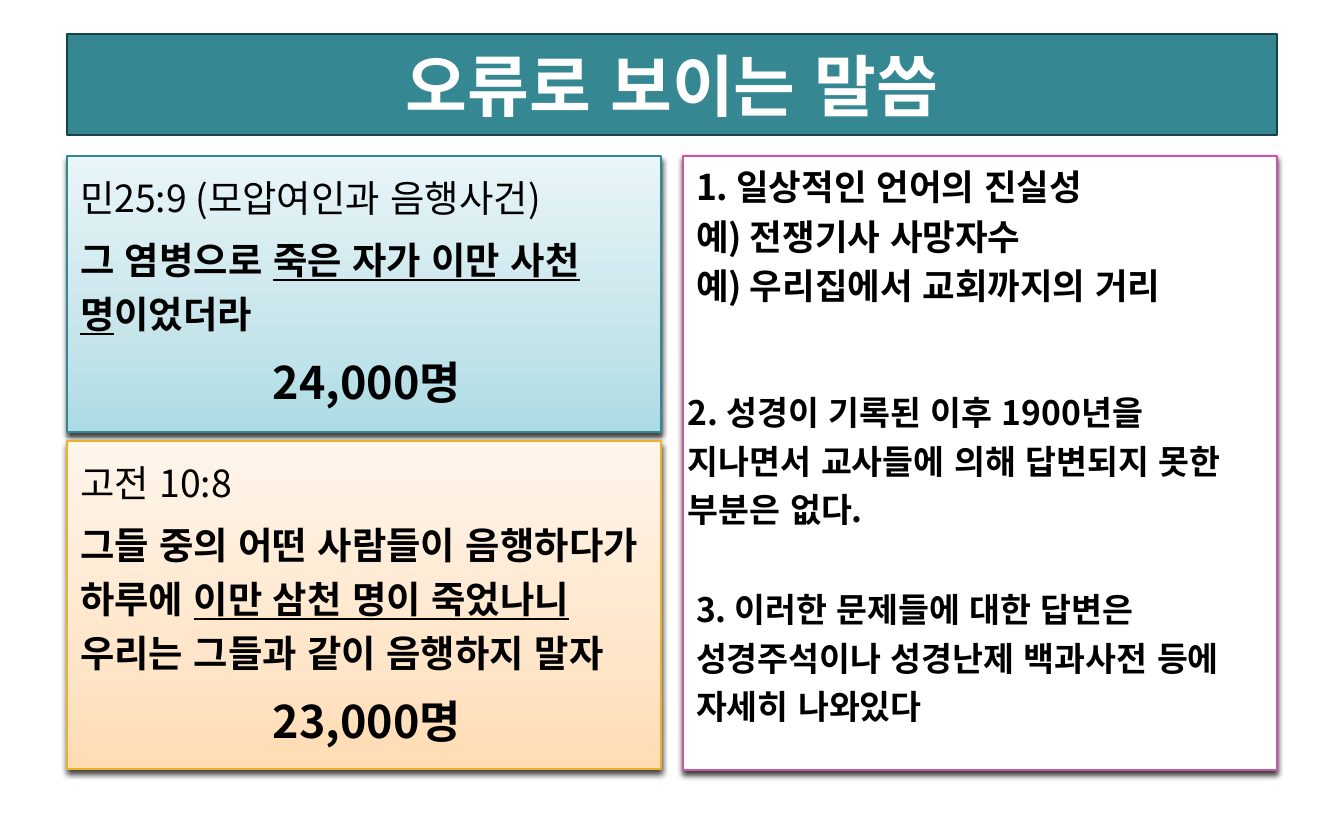
"""Build a one-slide comparison of two passages beside three explanations."""
from dataclasses import dataclass

from lxml import etree
from pptx import Presentation
from pptx.dml.color import RGBColor
from pptx.enum.lang import MSO_LANGUAGE_ID
from pptx.enum.text import MSO_ANCHOR, MSO_AUTO_SIZE, PP_ALIGN
from pptx.oxml.ns import qn
from pptx.util import Emu, Pt

KOREAN = MSO_LANGUAGE_ID.KOREAN
TOP, MIDDLE = MSO_ANCHOR.TOP, MSO_ANCHOR.MIDDLE
LEFT, CENTER = PP_ALIGN.LEFT, PP_ALIGN.CENTER
NO_FIT = MSO_AUTO_SIZE.NONE
PAGE_WIDTH, PAGE_HEIGHT = 1344, 840
SCALE = 9144000 / PAGE_WIDTH
COMPARISON_LAYOUT = 4


@dataclass(frozen=True)
class Theme:
    font: str = "Noto Sans CJK KR"
    ink: str = "000000"
    white: str = "FFFFFF"
    teal: str = "358791"
    dark_teal: str = "1A4348"
    aqua_line: str = "338993"
    amber_line: str = "EEB026"
    pink_line: str = "CA56A7"
    aqua: tuple[str, ...] = ("ACDBE4", "C6E5EB", "E9F5F8")
    amber: tuple[str, ...] = ("FFDCB3", "FFE6CA", "FFF5EB")
    title: int = 36
    figure: int = 24
    verse: int = 20
    point: int = 19
    note: int = 18


THEME = Theme()


@dataclass(frozen=True)
class Area:
    left: int
    top: int
    width: int
    height: int


@dataclass(frozen=True)
class Span:
    text: str
    bold: bool = True
    underline: bool = False


@dataclass(frozen=True)
class Line:
    spans: tuple[Span, ...]
    size: int
    spacing: float | None
    before: int = 0
    indent: int = 0
    align: PP_ALIGN = LEFT
    color: str = THEME.ink


@dataclass(frozen=True)
class Panel:
    placeholder: int
    area: Area
    fill: tuple[str, ...]
    border: str
    weight: float
    lines: tuple[Line, ...]
    anchor: MSO_ANCHOR = TOP
    shadow: bool = True


@dataclass(frozen=True)
class Note:
    area: Area
    text: str


def px(length: int) -> Emu:
    """Turn pixels into EMU."""
    return Emu(round(length * SCALE))


def passage(reference: str, verse: tuple[Span, ...], figure: str) -> tuple[Line, ...]:
    """Describe a Bible reference, its verse and the number it gives."""
    return (
        Line((Span(reference, bold=False),), THEME.verse, 29),
        Line(verse, THEME.verse, 29, before=4),
        Line((Span(figure),), THEME.figure, 35, before=4, indent=193),
    )


PANELS = (
    Panel(0, Area(67, 34, 1210, 101), (THEME.teal,), THEME.dark_teal, 1.5,
          (Line((Span("오류로 보이는 말씀"),), THEME.title, None, align=CENTER,
                color=THEME.white),), MIDDLE, shadow=False),
    Panel(1, Area(67, 156, 594, 276), THEME.aqua, THEME.aqua_line, 1,
          passage("민 25:9 (모압여인과 음행사건)".replace("민 ", "민"),
                  (Span("그 염병으로 "), Span("죽은 자가 이만 사천 명", underline=True),
                   Span("이었더라")), "24,000명")),
    Panel(3, Area(67, 441, 594, 328), THEME.amber, THEME.amber_line, 1,
          passage("고전 10:8",
                  (Span("그들 중의 어떤 사람들이 음행하다가 하루에 "),
                   Span("이만 삼천 명이 죽었나니", underline=True),
                   Span(" 우리는 그들과 같이 음행하지 말자")), "23,000명")),
    Panel(2, Area(683, 156, 594, 614), (THEME.white,), THEME.pink_line, 1.5,
          tuple(Line((Span(text),), THEME.point, 22.5, before=4 if row else 0)
                for row, text in enumerate(("1. 일상적인 언어의 진실성",
                                            "예) 전쟁기사 사망자수",
                                            "예) 우리집에서 교회까지의 거리")))),
)

NOTES = (
    Note(Area(675, 374, 594, 155),
         "2. 성경이 기록된 이후 1900년을 지나면서 교사들에 의해 답변되지 못한 부분은 없다."),
    Note(Area(683, 571, 571, 159),
         "3. 이러한 문제들에 대한 답변은 성경주석이나 성경난제 백과사전 등에 자세히 나와있다"),
)


def place(shape, area: Area) -> None:
    """Move and size a shape."""
    shape.left, shape.top = px(area.left), px(area.top)
    shape.width, shape.height = px(area.width), px(area.height)


def write(shape, lines: tuple[Line, ...], anchor: MSO_ANCHOR = TOP) -> None:
    """Fill a shape with formatted paragraphs."""
    frame = shape.text_frame
    frame.word_wrap, frame.auto_size, frame.vertical_anchor = True, NO_FIT, anchor
    frame.margin_left = frame.margin_right = px(13)
    frame.margin_top = px(10 if anchor == TOP else 7)
    frame.margin_bottom = px(7)
    for number, line in enumerate(lines):
        para = frame.add_paragraph() if number else frame.paragraphs[0]
        para.alignment = line.align
        para.space_before = Pt(line.before)
        if line.spacing:
            para.line_spacing = Pt(line.spacing)
        properties = para._p.get_or_add_pPr()
        properties.set("marL", str(px(line.indent)))
        properties.set("indent", "0")
        etree.SubElement(properties, qn("a:buNone"))
        for span in line.spans:
            run = para.add_run()
            run.text = span.text
            font = run.font
            font.name, font.size = THEME.font, Pt(line.size)
            font.bold, font.underline = span.bold, span.underline
            font.language_id = KOREAN
            font.color.rgb = RGBColor.from_string(line.color)
            east_asian = etree.Element(qn("a:ea"), typeface=THEME.font)
            run._r.rPr.find(qn("a:latin")).addnext(east_asian)


def paint(shape, colors: tuple[str, ...]) -> None:
    """Fill a shape with one colour or a rising gradient."""
    if len(colors) == 1:
        shape.fill.solid()
        shape.fill.fore_color.rgb = RGBColor.from_string(colors[0])
        return
    shape.fill.gradient()
    shape.fill.gradient_angle = 90
    stops = shape._element.spPr.find(f".//{qn('a:gsLst')}")
    for stop in list(stops):
        stops.remove(stop)
    for position, color in zip((0, 35000, 100000), colors):
        stop = etree.SubElement(stops, qn("a:gs"), pos=str(position))
        etree.SubElement(stop, qn("a:srgbClr"), val=color)


def cast_shadow(shape) -> None:
    """Add a soft shadow below a shape."""
    effects = shape._element.spPr.find(qn("a:effectLst"))
    shadow = etree.SubElement(effects, qn("a:outerShdw"), blurRad=str(Pt(3)),
                              dist=str(Pt(2)), dir="5400000", rotWithShape="0")
    color = etree.SubElement(shadow, qn("a:srgbClr"), val=THEME.ink)
    etree.SubElement(color, qn("a:alpha"), val="75000")


def draw_panel(page, panel: Panel) -> None:
    """Format a placeholder as a bordered panel."""
    shape = page.placeholders[panel.placeholder]
    place(shape, panel.area)
    paint(shape, panel.fill)
    shape.line.color.rgb = RGBColor.from_string(panel.border)
    shape.line.width = Pt(panel.weight)
    shape.shadow.inherit = False
    if panel.shadow:
        cast_shadow(shape)
    write(shape, panel.lines, panel.anchor)


def draw_note(page, note: Note) -> None:
    """Add a text box with one bold paragraph."""
    area = note.area
    box = page.shapes.add_textbox(*map(px, (area.left, area.top, area.width, area.height)))
    write(box, (Line((Span(note.text),), THEME.note, 26),))


def main() -> None:
    """Build and save the deck."""
    deck = Presentation()
    deck.slide_width, deck.slide_height = px(PAGE_WIDTH), px(PAGE_HEIGHT)
    page = deck.slides.add_slide(deck.slide_layouts[COMPARISON_LAYOUT])
    for panel in PANELS:
        draw_panel(page, panel)
    for note in NOTES:
        draw_note(page, note)
    used = {panel.placeholder for panel in PANELS}
    for holder in list(page.placeholders):
        if holder.placeholder_format.idx not in used:
            holder._element.getparent().remove(holder._element)
    deck.save("out.pptx")


if __name__ == "__main__":
    main()
